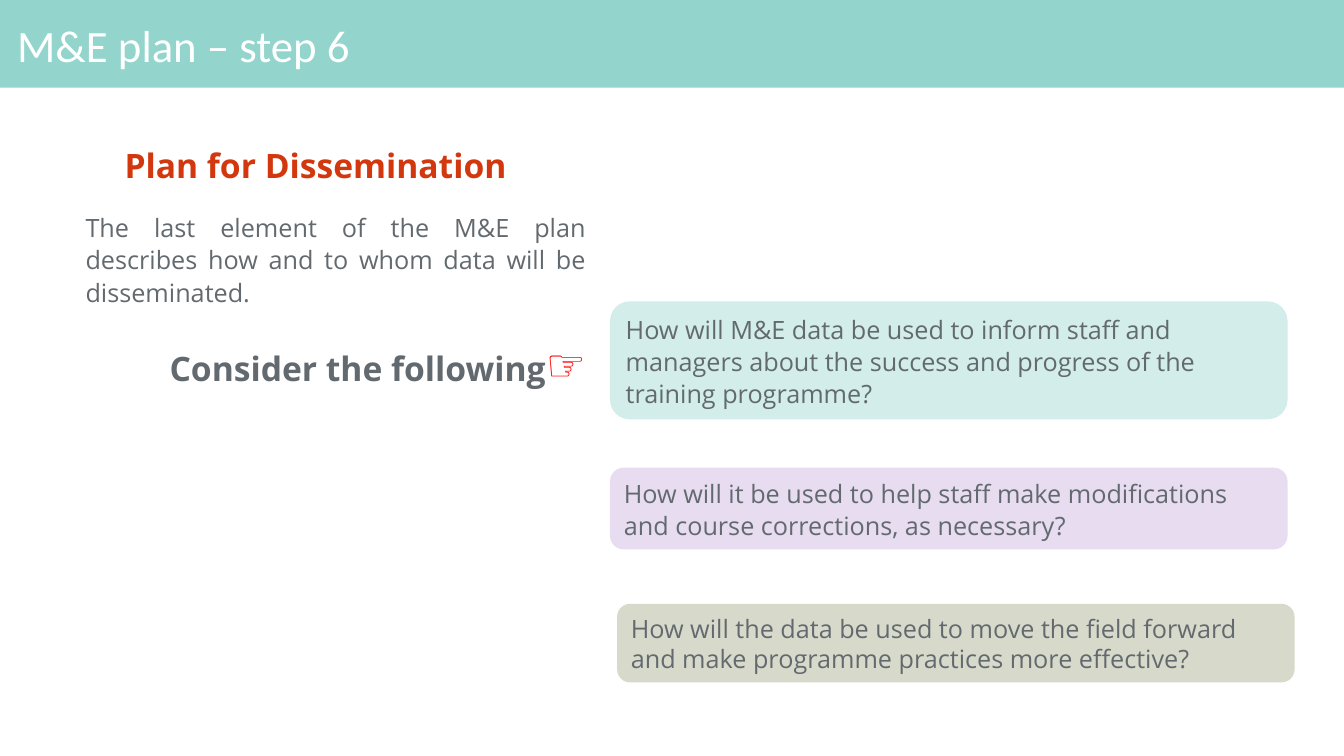
import pptx
import pptx.util
from pptx.dml.color import RGBColor
from pptx.enum.shapes import MSO_SHAPE
from pptx.enum.text import MSO_ANCHOR, MSO_AUTO_SIZE, PP_ALIGN

WIDE, HIGH = 1333, 750
GREY = "636A6F"
QUERIES = [
    ((605, 299, 672, 117), "D2EDEA", 1.07,
     "How will M&E data be used to inform staff and managers about the "
     "success and progress of the training programme?"),
    ((605, 464, 672, 81), "E7DCF0", 1.07,
     "How will it be used to help staff make modifications and course "
     "corrections, as necessary?"),
    ((612, 599, 672, 78), "D7DACA", 1.0,
     "How will the data be used to move the field forward and make "
     "programme practices more effective?"),
]


def px(count):
    """Turn px, 100 to the inch, into EMU."""
    return pptx.util.Emu(count * 9144)


def color(code):
    return RGBColor.from_string(code)


def style(font, size, code, bold=False, name="Open Sans"):
    font.name, font.size, font.bold = name, pptx.util.Pt(size), bold
    font.color.rgb = color(code)


def block(slide, kind, box, fill):
    """Add a flat filled shape without an outline."""
    shape = slide.shapes.add_shape(kind, *map(px, box))
    shape.shadow.inherit = False
    shape.fill.solid()
    shape.fill.fore_color.rgb = color(fill)
    shape.line.fill.background()
    return shape


def header(slide, box, text):
    left, top, width, height = box
    band = block(slide, MSO_SHAPE.RECTANGLE, box, "93D4CC")
    title = slide.shapes.title
    title._element.addprevious(band._element)
    title.left, title.top = px(left + 11), px(top + 9)
    title.width, title.height = px(width - 27), px(height - 9)
    frame = title.text_frame
    frame.text = text
    frame.word_wrap = True
    frame.vertical_anchor = MSO_ANCHOR.MIDDLE
    frame.margin_left = frame.margin_right = px(6)
    frame.margin_top = frame.margin_bottom = px(6)
    para = frame.paragraphs[0]
    para.alignment, para.line_spacing = PP_ALIGN.LEFT, 0.9
    style(para.font, 32, "FFFFFF", name="Calibri")


def intro(slide, box):
    frame = slide.shapes.add_textbox(*map(px, box)).text_frame
    frame.word_wrap = True
    rows = [
        ("Plan for Dissemination", PP_ALIGN.CENTER, 0, 10, 24, "D3370D", True),
        ("The last element of the M&E plan describes how and to whom data "
         "will be disseminated.", PP_ALIGN.JUSTIFY, 40, 18, 18, GREY, False),
        ("Consider the following", PP_ALIGN.RIGHT, 40, 18, 24, GREY, True),
    ]
    for index, (text, align, indent, gap, size, code, bold) in enumerate(rows):
        para = frame.add_paragraph() if index else frame.paragraphs[0]
        para.add_run().text = text
        para.alignment, para.line_spacing = align, 1.07
        para.space_before = pptx.util.Pt(gap)
        para._p.get_or_add_pPr().set("marL", str(px(indent)))
        style(para.font, size, code, bold)
    hand = para.add_run()
    hand.text = "☞"
    style(hand.font, 32, "FF0000", True)


def query(slide, box, fill, spacing, text):
    shape = block(slide, MSO_SHAPE.ROUNDED_RECTANGLE, box, fill)
    frame = shape.text_frame
    frame.text = text
    frame.word_wrap = True
    frame.auto_size = MSO_AUTO_SIZE.SHAPE_TO_FIT_TEXT
    para = frame.paragraphs[0]
    para.alignment, para.line_spacing = PP_ALIGN.LEFT, spacing
    style(para.font, 18, GREY)


def main():
    deck = pptx.Presentation()
    deck.slide_width, deck.slide_height = px(WIDE), px(HIGH)
    slide = deck.slides.add_slide(deck.slide_layouts[5])
    header(slide, (0, 0, WIDE, 87), "M&E plan – step 6")
    intro(slide, (35, 136, 556, 254))
    for item in QUERIES:
        query(slide, *item)
    deck.save("out.pptx")


if __name__ == "__main__":
    main()
